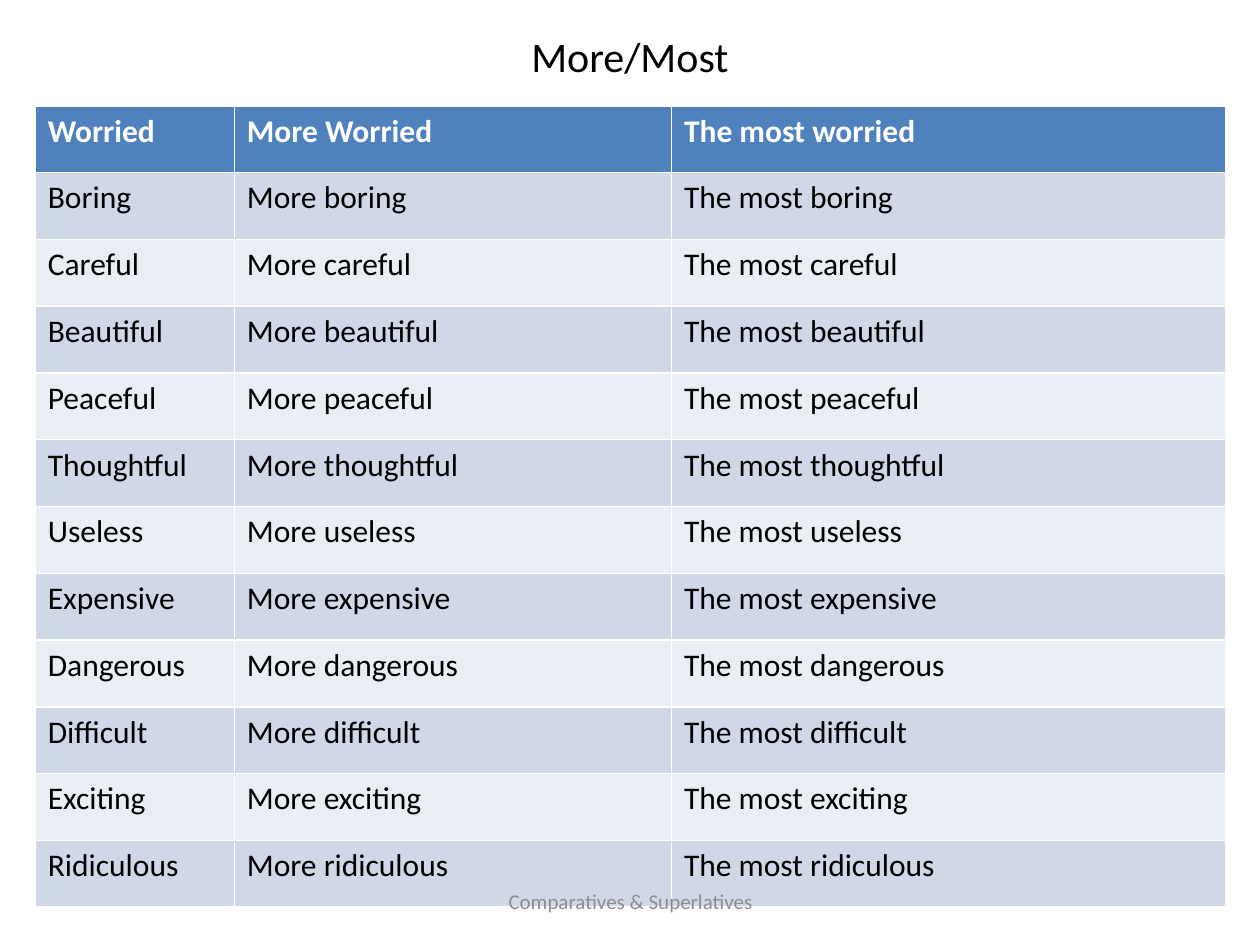
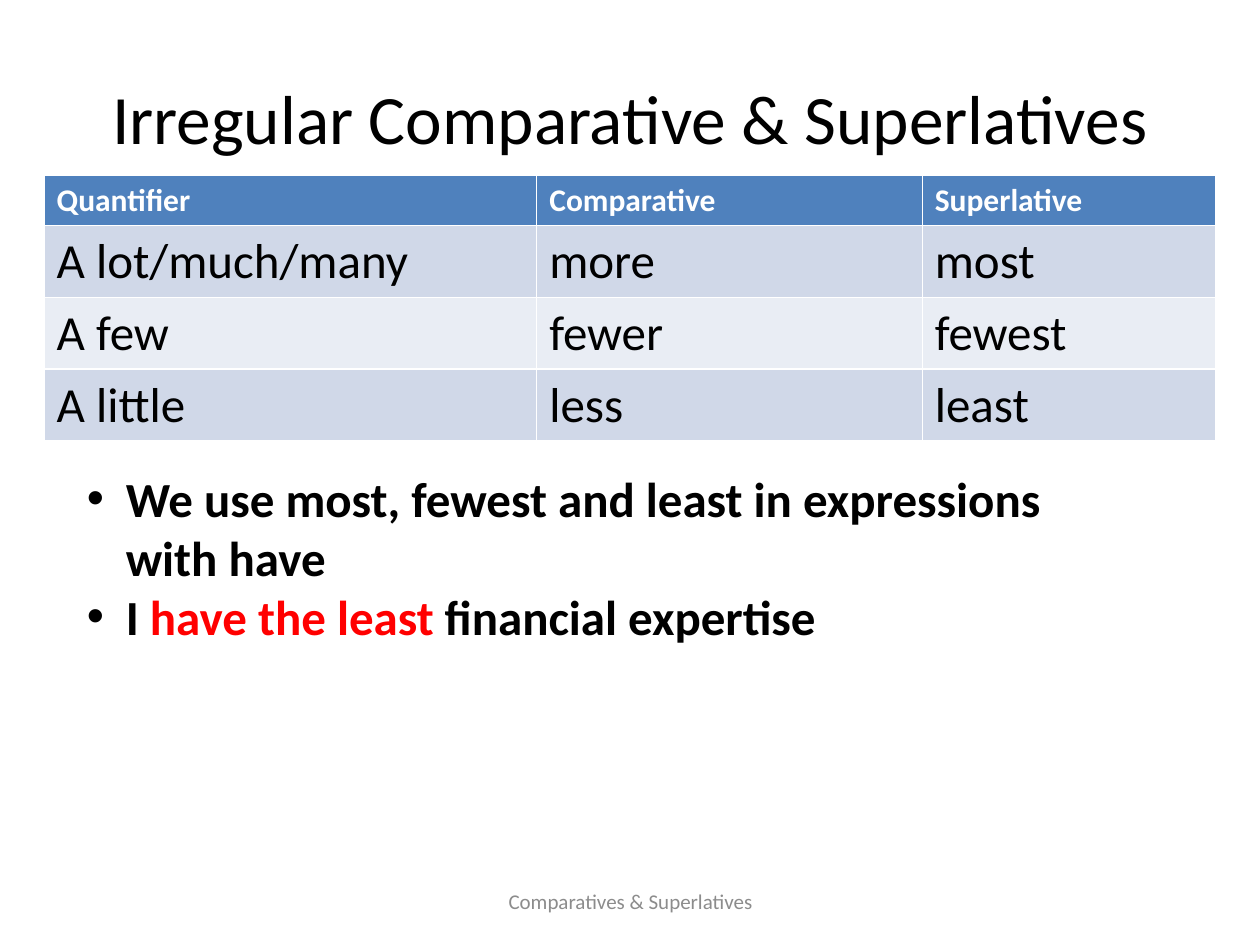
"""Build two slides on comparatives and superlatives."""
import pptx
import pptx.dml.color
import pptx.enum.text
import pptx.oxml.xmlchemy
import pptx.util
import lxml.etree
from pptx.util import Inches

FONT = "Calibri"
BLACK, WHITE, RED, GREY = "000000", "FFFFFF", "FF0000", "8C8C8C"
HEADER_FILL = "4F81BD"
BAND_FILLS = ["E9EDF4", "D0D8E8"]
FOOTER = "Comparatives & Superlatives"


def style_font(font, size, color, bold=False):
    font.name = FONT
    font.size = pptx.util.Pt(size)
    font.bold = bold
    font.color.rgb = pptx.dml.color.RGBColor.from_string(color)


def add_centred_text(slide, text, box, size, color):
    shape = slide.shapes.add_textbox(*map(Inches, box))
    shape.text_frame.word_wrap = True
    shape.text_frame.vertical_anchor = pptx.enum.text.MSO_ANCHOR.MIDDLE
    paragraph = shape.text_frame.paragraphs[0]
    paragraph.text = text
    paragraph.alignment = pptx.enum.text.PP_ALIGN.CENTER
    style_font(paragraph.font, size, color)


adjectives = ["Boring", "Careful", "Beautiful", "Peaceful", "Thoughtful", "Useless",
              "Expensive", "Dangerous", "Difficult", "Exciting", "Ridiculous"]
more_most_rows = [["Worried", "More Worried", "The most worried"]]
for adjective in adjectives:
    more_most_rows.append(
        [adjective, f"More {adjective.lower()}", f"The most {adjective.lower()}"])

irregular_rows = [
    ["Quantifier", "Comparative", "Superlative"],
    ["A lot/much/many", "more", "most"],
    ["A few", "fewer", "fewest"],
    ["A little", "less", "least"],
]

pages = [
    {"title": "More/Most", "title_box": (0.5, 0.13, 9, 0.63), "title_size": 24,
     "rows": more_most_rows, "corner": (0.28, 0.84), "widths": [1.58, 3.47, 4.4],
     "header_height": 0.53, "row_height": 0.53, "body_size": 18},
    {"title": "Irregular Comparative & Superlatives",
     "title_box": (0.5, 0.3, 9, 1.25), "title_size": 39.6,
     "rows": irregular_rows, "corner": (0.35, 1.39), "widths": [3.91, 3.06, 2.33],
     "header_height": 0.4, "row_height": 0.57, "body_size": 28},
]

presentation = pptx.Presentation()
presentation.slide_width = Inches(10)
presentation.slide_height = Inches(7.5)

for page in pages:
    slide = presentation.slides.add_slide(presentation.slide_layouts[6])
    add_centred_text(slide, page["title"], page["title_box"], page["title_size"], BLACK)

    rows, widths = page["rows"], page["widths"]
    heights = [page["header_height"]] + [page["row_height"]] * (len(rows) - 1)
    left, top = page["corner"]
    table = slide.shapes.add_table(
        len(rows), len(widths), Inches(left), Inches(top),
        Inches(sum(widths)), Inches(sum(heights))).table
    for column, width in zip(table.columns, widths):
        column.width = Inches(width)
    for row_index, (words, height) in enumerate(zip(rows, heights)):
        table.rows[row_index].height = Inches(height)
        is_header = row_index == 0
        fill = HEADER_FILL if is_header else BAND_FILLS[row_index % 2]
        for column_index, word in enumerate(words):
            cell = table.cell(row_index, column_index)
            cell.fill.solid()
            cell.fill.fore_color.rgb = pptx.dml.color.RGBColor.from_string(fill)
            paragraph = cell.text_frame.paragraphs[0]
            paragraph.text = word
            style_font(paragraph.font, 18 if is_header else page["body_size"],
                       WHITE if is_header else BLACK, is_header)

    add_centred_text(slide, FOOTER, (3.42, 6.95, 3.17, 0.4), 12, GREY)

bullets = [
    [("We use most, fewest and least in expressions with have", BLACK)],
    [("I ", BLACK), ("have the least ", RED), ("financial expertise", BLACK)],
]
shape = slide.shapes.add_textbox(Inches(0.59), Inches(3.67), Inches(8.35), Inches(1.51))
text_frame = shape.text_frame
text_frame.word_wrap = True
for index, pieces in enumerate(bullets):
    paragraph = text_frame.add_paragraph() if index else text_frame.paragraphs[0]
    for text, color in pieces:
        run = paragraph.add_run()
        run.text = text
        style_font(run.font, 28, color, True)
    properties = paragraph._p.get_or_add_pPr()
    properties.set("marL", str(Inches(0.31)))
    properties.set("indent", str(-Inches(0.31)))
    bullet_font = lxml.etree.SubElement(properties, pptx.oxml.ns.qn("a:buFont"))
    bullet_font.set("typeface", "Arial")
    bullet = lxml.etree.SubElement(properties, pptx.oxml.ns.qn("a:buChar"))
    bullet.set("char", "•")

presentation.save("out.pptx")
